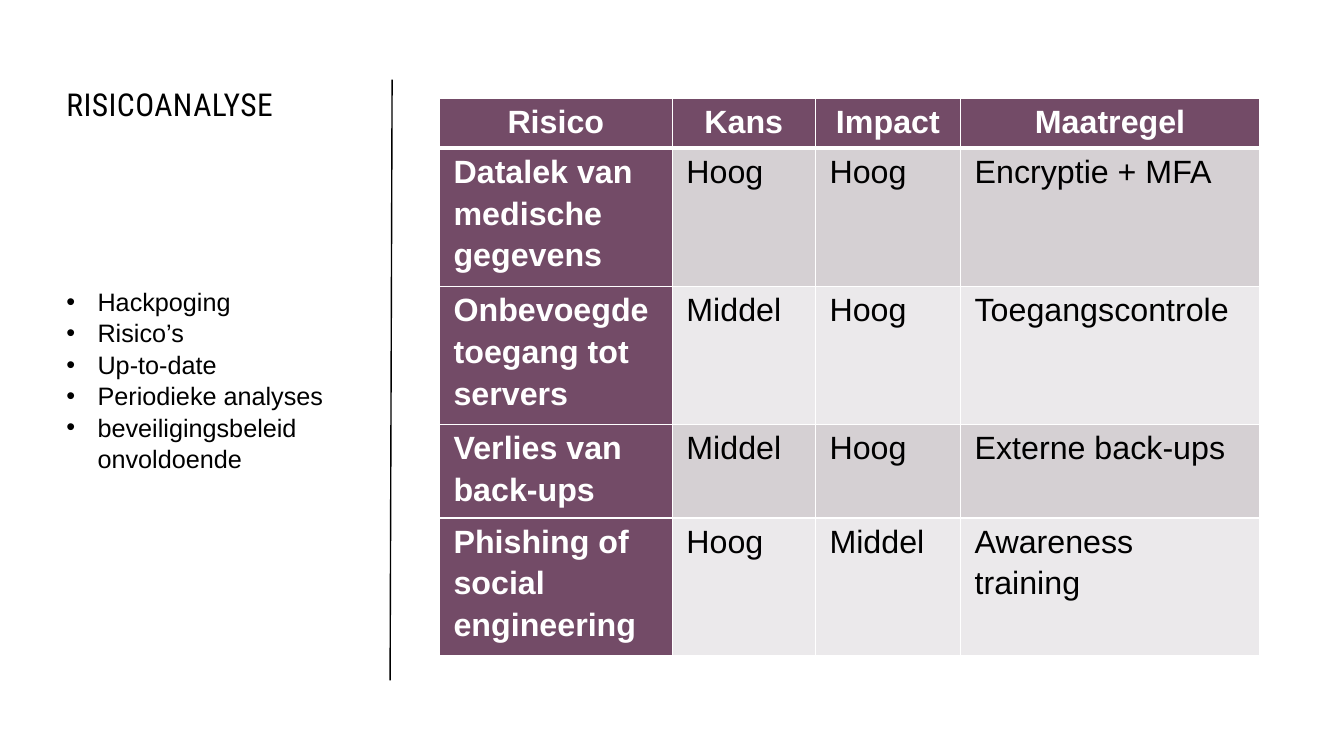
from lxml.etree import SubElement
from pptx import Presentation
from pptx.dml.color import RGBColor
from pptx.enum.shapes import MSO_CONNECTOR
from pptx.enum.text import MSO_ANCHOR, PP_ALIGN
from pptx.oxml.ns import qn
from pptx.util import Inches, Pt

WHITE, BLACK, PLUM = "FFFFFF", "000000", "734B67"
BANDS = ["D5D0D3", "EBE9EB"]
COLS, ROWS = 40, 30

POINTS = ["Hackpoging", "Risico’s", "Up-to-date", "Periodieke analyses",
          "beveiligingsbeleid onvoldoende"]
RISKS = [
    ["Risico", "Kans", "Impact", "Maatregel"],
    ["Datalek van medische gegevens", "Hoog", "Hoog", "Encryptie + MFA"],
    ["Onbevoegde toegang tot servers", "Middel", "Hoog", "Toegangscontrole"],
    ["Verlies van back-ups", "Middel", "Hoog", "Externe back-ups"],
    ["Phishing of social engineering", "Hoog", "Middel", "Awareness training"],
]


def color(code):
    return RGBColor.from_string(code)


class Page:
    """Draws styled elements on one slide, measured in grid columns and rows."""

    def __init__(self, deck):
        self.deck = deck
        self.slide = deck.slides.add_slide(deck.slide_layouts[6])
        self.body, self.head = "Arial", "Roboto Condensed"

    def x(self, cols):
        return int(self.deck.slide_width * cols / COLS)

    def y(self, rows):
        return int(self.deck.slide_height * rows / ROWS)

    def run(self, para, text, size, ink=BLACK, bold=False, face=None):
        run = para.add_run()
        run.text = text
        font = run.font
        font.name, font.size, font.bold = face or self.body, Pt(size), bold
        font.color.rgb = color(ink)
        return run

    def box(self, left, top, width, height):
        frame = self.slide.shapes.add_textbox(
            self.x(left), self.y(top), self.x(width), self.y(height)).text_frame
        frame.word_wrap = True
        return frame

    def title(self, text, *area):
        frame = self.box(*area)
        frame.vertical_anchor = MSO_ANCHOR.MIDDLE
        run = self.run(frame.paragraphs[0], text, 22.5, face=self.head)
        run.font._element.set("spc", "30")

    def bullets(self, items, *area):
        frame = self.box(*area)
        for i, item in enumerate(items):
            para = frame.add_paragraph() if i else frame.paragraphs[0]
            para.line_spacing = 1.04
            props = para._p.get_or_add_pPr()
            props.set("marL", str(Inches(0.31)))
            props.set("indent", str(-Inches(0.31)))
            SubElement(props, qn("a:buFont"), typeface=self.body)
            SubElement(props, qn("a:buChar"), char="•")
            self.run(para, item, 18)

    def line(self, x1, y1, x2, y2):
        line = self.slide.shapes.add_connector(
            MSO_CONNECTOR.STRAIGHT, self.x(x1), self.y(y1), self.x(x2), self.y(y2))
        line.line.color.rgb = color(BLACK)
        line.line.width = Pt(1)
        SubElement(line._element.spPr, qn("a:effectLst"))

    def border(self, cell, side, width):
        edge = SubElement(cell._tc.get_or_add_tcPr(), qn("a:ln" + side), w=str(Pt(width)))
        SubElement(SubElement(edge, qn("a:solidFill")), qn("a:srgbClr"), val=WHITE)

    def cell(self, cell, text, r, c):
        for side in "LRTB":
            thick = (r, side) in [(0, "B"), (1, "T")]
            self.border(cell, side, 3 if thick else 1)
        key = r == 0 or c == 0
        cell.fill.solid()
        cell.fill.fore_color.rgb = color(PLUM if key else BANDS[(r - 1) % 2])
        cell.margin_left = cell.margin_right = Inches(0.14)
        cell.margin_top = cell.margin_bottom = 0
        para = cell.text_frame.paragraphs[0]
        para.alignment = PP_ALIGN.LEFT if r else PP_ALIGN.CENTER
        para.line_spacing, para.space_after = 1.16, Pt(8)
        self.run(para, text, 23, WHITE if key else BLACK, key)

    def table(self, data, left, top, widths, heights):
        table = self.slide.shapes.add_table(
            len(heights), len(widths), self.x(left), self.y(top),
            self.x(sum(widths)), self.y(sum(heights))).table
        table.first_col = True
        for col, width in zip(table.columns, widths):
            col.width = self.x(width)
        for row, height in zip(table.rows, heights):
            row.height = self.y(height)
        for r, texts in enumerate(data):
            for c, text in enumerate(texts):
                self.cell(table.cell(r, c), text, r, c)


def main():
    deck = Presentation()
    deck.slide_width, deck.slide_height = Inches(13.33), Inches(7.5)
    page = Page(deck)
    page.title("RISICOANALYSE", 1.68, 3.16, 8.28, 1.96)
    page.line(11.61, 27, 11.67, 3.16)
    page.table(RISKS, 13.08, 3.92, [6.93, 4.26, 4.32, 8.91],
               [1.96, 5.48, 5.48, 3.72, 5.48])
    page.bullets(POINTS, 1.68, 11.12, 8.43, 8.88)
    deck.save("out.pptx")


if __name__ == "__main__":
    main()
